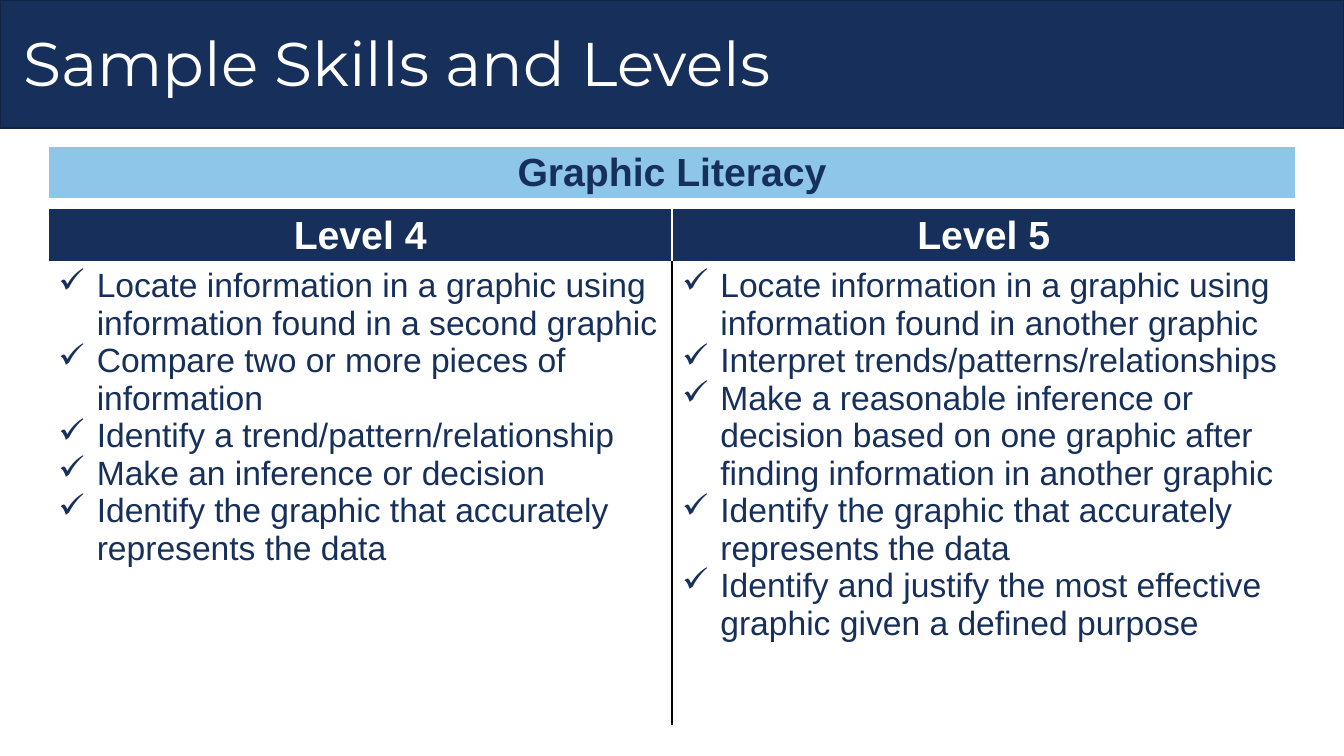
import dataclasses
import lxml.etree
import pptx
import pptx.dml.color
import pptx.enum.shapes
import pptx.enum.text
import pptx.oxml.ns
import pptx.util

Inch = pptx.util.Inches
Align = pptx.enum.text.PP_ALIGN


@dataclasses.dataclass(frozen=True)
class Theme:
    navy: str = "17305B"
    edge: str = "112443"
    sky: str = "8DC6E8"
    white: str = "FFFFFF"
    black: str = "000000"
    head: str = "Montserrat"
    body: str = "Arial"
    title: int = 44
    label: int = 28
    text: int = 24
    thin: int = 1
    thick: int = 3


THEME = Theme()
WIDE, HIGH = 13.33, 7.5
LEFT, SPAN = 0.48, 12.37
INDENT = 0.38

LEVELS = {
    "Level 4": [
        "Locate information in a graphic using information found in a second graphic",
        "Compare two or more pieces of information",
        "Identify a trend/pattern/relationship",
        "Make an inference or decision",
        "Identify the graphic that accurately represents the data",
    ],
    "Level 5": [
        "Locate information in a graphic using information found in another graphic",
        "Interpret trends/patterns/relationships",
        "Make a reasonable inference or decision based on one graphic after "
        "finding information in another graphic",
        "Identify the graphic that accurately represents the data",
        "Identify and justify the most effective graphic given a defined purpose",
    ],
}


def color(code):
    return pptx.dml.color.RGBColor.from_string(code)


def node(parent, tag, **attrs):
    return lxml.etree.SubElement(parent, pptx.oxml.ns.qn(tag), **attrs)


def style(para, size, code, face, bold=False):
    for run in para.runs:
        run.font.size = pptx.util.Pt(size)
        run.font.color.rgb = color(code)
        run.font.name = face
        run.font.bold = bold


def border(cell, **sides):
    """Draw the four cell edges; each side is a colour and a width."""
    props = cell._tc.get_or_add_tcPr()
    for side in "LRTB":
        code, width = sides.get(side, (THEME.white, THEME.thin))
        line = node(props, f"a:ln{side}", w=str(pptx.util.Pt(width)))
        node(node(line, "a:solidFill"), "a:srgbClr", val=code)


def label(cell, text, back, fore):
    """Fill a heading cell with centred bold text."""
    border(cell, B=(THEME.white, THEME.thick))
    cell.fill.solid()
    cell.fill.fore_color.rgb = color(back)
    para = cell.text_frame.paragraphs[0]
    para.text = text
    para.alignment = Align.CENTER
    style(para, THEME.label, fore, THEME.body, True)


def checks(cell, items, **sides):
    """Fill a cell with a check-marked list."""
    border(cell, **sides)
    cell.fill.background()
    cell.text_frame.text = "\n".join(items)
    for para in cell.text_frame.paragraphs:
        props = para._p.get_or_add_pPr()
        props.set("marL", str(Inch(INDENT)))
        props.set("indent", str(-Inch(INDENT)))
        node(props, "a:buChar", char="✓")
        style(para, THEME.text, THEME.navy, THEME.body)


def grid(slide, box, cols, rows):
    """Add a plain table with equal columns and the given row heights."""
    frame = slide.shapes.add_table(len(rows), cols, *map(Inch, box))
    table = frame.table
    table.first_row = table.horz_banding = False
    for col in table.columns:
        col.width = Inch(box[2] / cols)
    for row, tall in zip(table.rows, rows):
        row.height = Inch(tall)
    return table


def header(slide, box):
    """Title bar, with the title placeholder on top."""
    left, top, wide, tall = box
    bar = slide.shapes.add_shape(
        pptx.enum.shapes.MSO_SHAPE.RECTANGLE, *map(Inch, box))
    bar.shadow.inherit = False
    bar.fill.solid()
    bar.fill.fore_color.rgb = color(THEME.navy)
    bar.line.color.rgb = color(THEME.edge)
    bar.line.width = pptx.util.Pt(THEME.thin)
    title = slide.shapes.title
    bar._element.getparent().insert(2, bar._element)
    title.left, title.top = Inch(left + 0.13), Inch(top + 0.08)
    title.width, title.height = Inch(wide * 0.73), Inch(tall - 0.11)
    title.text_frame.text = "Sample Skills and Levels"
    title.text_frame.vertical_anchor = pptx.enum.text.MSO_ANCHOR.MIDDLE
    para = title.text_frame.paragraphs[0]
    para.alignment = Align.LEFT
    para.line_spacing = 0.9
    style(para, THEME.title, THEME.white, THEME.head)


def skills(slide, box):
    """Level headings above their lists, split by a black rule."""
    head = 0.52
    table = grid(slide, box, len(LEVELS), [head, box[3] - head])
    rule = (THEME.black, THEME.thin)
    for col, (level, items) in enumerate(LEVELS.items()):
        label(table.cell(0, col), level, THEME.navy, THEME.white)
        inner = {"L": rule} if col else {"R": rule}
        checks(table.cell(1, col), items, **inner)


def banner(slide, box):
    """Subject strip above the levels."""
    table = grid(slide, box, 1, [box[3]])
    label(table.cell(0, 0), "Graphic Literacy", THEME.sky, THEME.navy)


def main():
    deck = pptx.Presentation()
    deck.slide_width, deck.slide_height = Inch(WIDE), Inch(HIGH)
    slide = deck.slides.add_slide(deck.slide_layouts.get_by_name("Title Only"))
    header(slide, (0, 0, WIDE, 1.27))
    skills(slide, (LEFT, 2.07, SPAN, 5.1))
    banner(slide, (LEFT, 1.45, SPAN, 0.52))
    deck.save("out.pptx")


if __name__ == "__main__":
    main()
